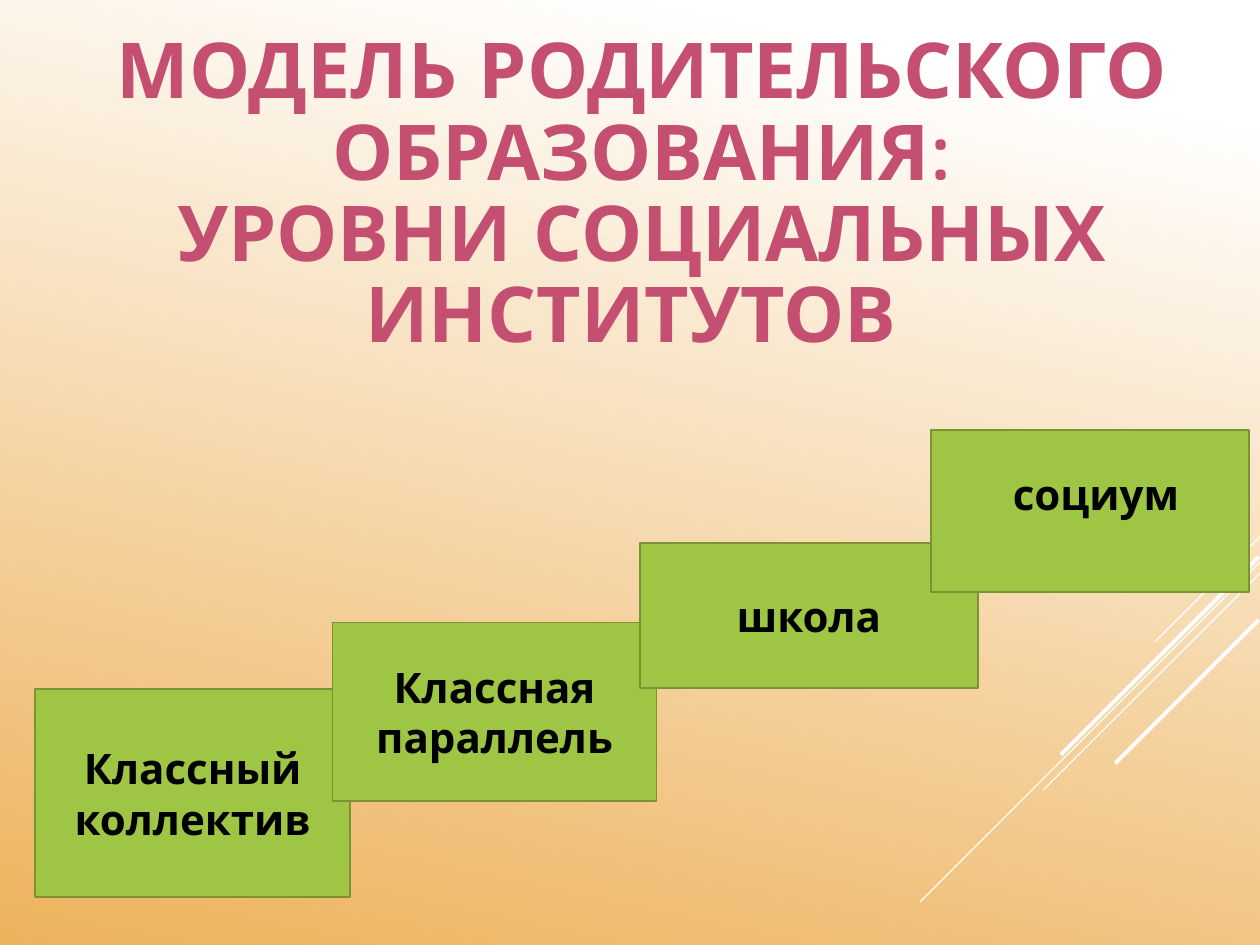
from lxml import etree
from pptx import Presentation
from pptx.dml.color import RGBColor
from pptx.enum.shapes import MSO_CONNECTOR, MSO_SHAPE
from pptx.enum.text import MSO_ANCHOR, MSO_AUTO_SIZE, PP_ALIGN
from pptx.oxml.ns import qn
from pptx.util import Inches, Pt

RECT = MSO_SHAPE.RECTANGLE
LINE = MSO_CONNECTOR.STRAIGHT
MIDDLE = MSO_ANCHOR.MIDDLE
CENTER = PP_ALIGN.CENTER
NO_FIT = MSO_AUTO_SIZE.NONE
GROW = MSO_AUTO_SIZE.SHAPE_TO_FIT_TEXT

FONT = "Quicksand"
WHITE, AMBER, ROSE = "FFFFFF", "EDB25C", "C54F71"
GREEN, OLIVE, BLACK = "9EC544", "7D9232", "000000"

TITLE = "МОДЕЛЬ РОДИТЕЛЬСКОГО ОБРАЗОВАНИЯ:\vУРОВНИ СОЦИАЛЬНЫХ ИНСТИТУТОВ "

# Left, top, width, height of each step, from lowest to highest
STEPS = [
    ("Классный коллектив", (0.28, 5.47, 2.5, 1.65)),
    ("Классная параллель", (2.64, 4.94, 2.57, 1.42)),
    ("школа", (5.08, 4.31, 2.68, 1.15)),
    ("", (7.39, 3.41, 2.52, 1.29)),
]

# Right end, top, drop and weight of each diagonal ray
RAYS = [
    (10, 4.26, 0.83, 0.75),
    (10, 4.46, 2.7, 0.75),
    (10, 4.55, 1.72, 0.75),
    (9.99, 4.42, 1.57, 2.25),
    (9.99, 4.92, 1.14, 2.25),
]


def color(code):
    return RGBColor.from_string(code)


def inches(box):
    return [Inches(n) for n in box]


def write(shape, text, size, code, align=None):
    shape.text_frame.text = text
    par = shape.text_frame.paragraphs[0]
    par.alignment = align
    font = par.font
    font.name, font.size, font.bold = FONT, Pt(size), True
    font.color.rgb = color(code)
    return par


def add_backdrop(slide):
    fill = slide.background.fill
    fill.gradient()
    fill.gradient_angle = 360 - 102
    for stop, (place, code) in zip(fill.gradient_stops, [(0.1, WHITE), (1, AMBER)]):
        stop.position = place
        stop.color.rgb = color(code)


def add_rays(slide, rays):
    """Draw lines that fall to the left at 45 degrees."""
    for right, top, drop, weight in rays:
        ends = inches((right, top, right - drop, top + drop))
        ray = slide.shapes.add_connector(LINE, *ends)
        ray.line.color.rgb = color(WHITE)
        ray.line.width = Pt(weight)
        etree.SubElement(ray._element.spPr, qn("a:effectLst"))


def add_title(slide, box):
    title = slide.shapes.title
    title.left, title.top, title.width, title.height = inches(box)
    write(title, TITLE, 44, ROSE, CENTER).line_spacing = 0.88
    frame = title.text_frame
    frame.word_wrap = True
    frame.auto_size = NO_FIT
    frame.vertical_anchor = MIDDLE


def add_step(slide, text, box):
    step = slide.shapes.add_shape(RECT, *inches(box))
    step.shadow.inherit = False
    step.fill.solid()
    step.fill.fore_color.rgb = color(GREEN)
    step.line.color.rgb = color(OLIVE)
    step.line.width = Pt(1)
    if text:
        step.text_frame.word_wrap = True
        step.text_frame.vertical_anchor = MIDDLE
        write(step, text, 24, BLACK, CENTER)


def add_label(slide, text, box):
    label = slide.shapes.add_textbox(*inches(box))
    label.text_frame.word_wrap = True
    label.text_frame.auto_size = GROW
    write(label, text, 24, BLACK)


def main():
    deck = Presentation()
    deck.slide_width, deck.slide_height = Inches(10), Inches(7.5)
    slide = deck.slides.add_slide(deck.slide_layouts[5])
    add_backdrop(slide)
    add_rays(slide, RAYS)
    add_title(slide, (0.28, 0, 9.63, 3.12))
    for text, box in STEPS:
        add_step(slide, text, box)
    add_label(slide, "социум", (7.94, 3.67, 1.97, 0.5))
    deck.save("out.pptx")


if __name__ == "__main__":
    main()
